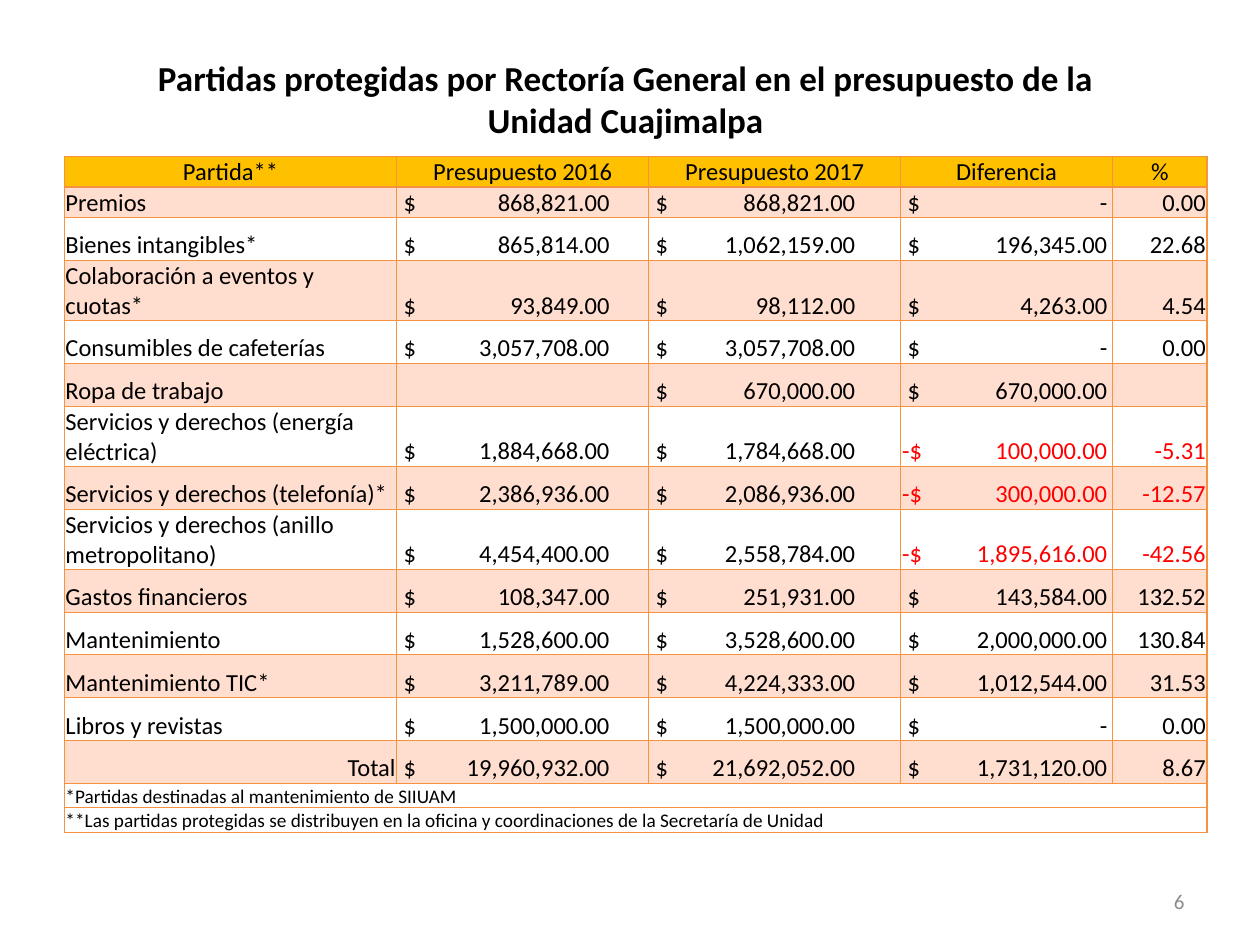
from lxml.etree import SubElement
from pptx import Presentation
from pptx.dml.color import RGBColor
from pptx.enum.text import MSO_ANCHOR as Anchor, MSO_AUTO_SIZE as AutoSize, PP_ALIGN as Align
from pptx.oxml import parse_xml
from pptx.oxml.ns import nsdecls, qn
from pptx.util import Inches, Pt

COLORS = {
    "text": "000000", "negative": "FF0000", "number": "8C8C8C",
    "header": "FFC000", "band": "FFDDCF", "plain": "FFFFFF", "border": "F69240",
}
COLUMN_WIDTHS = [2.64, 2, 2, 1.68, 0.75]
ROW_HEIGHTS = [0.19, 0.22] + [0.34] * 12 + [0.19] * 2
MONEY_TABS = {1: 1.68, 2: 1.63, 3: 1.63}
CELL_FORMAT = {
    "margin_left": Inches(0.01), "margin_right": Inches(0.01),
    "margin_top": Inches(0.01), "margin_bottom": 0,
    "vertical_anchor": Anchor.BOTTOM,
}
HEADERS = ["Partida**", "Presupuesto 2016", "Presupuesto 2017", "Diferencia", "%"]
BUDGET = [
    ("Premios", "868,821.00", "868,821.00", "-", "0.00"),
    ("Bienes intangibles*", "865,814.00", "1,062,159.00", "196,345.00", "22.68"),
    ("Colaboración a eventos y cuotas*", "93,849.00", "98,112.00", "4,263.00", "4.54"),
    ("Consumibles de cafeterías", "3,057,708.00", "3,057,708.00", "-", "0.00"),
    ("Ropa de trabajo", "", "670,000.00", "670,000.00", ""),
    ("Servicios y derechos (energía eléctrica)", "1,884,668.00", "1,784,668.00", "-100,000.00", "-5.31"),
    ("Servicios y derechos (telefonía)*", "2,386,936.00", "2,086,936.00", "-300,000.00", "-12.57"),
    ("Servicios y derechos (anillo metropolitano)", "4,454,400.00", "2,558,784.00", "-1,895,616.00", "-42.56"),
    ("Gastos financieros", "108,347.00", "251,931.00", "143,584.00", "132.52"),
    ("Mantenimiento", "1,528,600.00", "3,528,600.00", "2,000,000.00", "130.84"),
    ("Mantenimiento TIC*", "3,211,789.00", "4,224,333.00", "1,012,544.00", "31.53"),
    ("Libros y revistas", "1,500,000.00", "1,500,000.00", "-", "0.00"),
    ("Total", "19,960,932.00", "21,692,052.00", "1,731,120.00", "8.67"),
]
NOTES = [
    "*Partidas destinadas al mantenimiento de SIIUAM",
    "**Las partidas protegidas se distribuyen en la oficina y coordinaciones de la Secretaría de Unidad",
]


def apply_format(target, values):
    """Set each attribute named in values on the target."""
    for name, value in values.items():
        setattr(target, name, value)


def write_text(frame, text, size, color="text", align=Align.LEFT, bold=False):
    """Write one formatted paragraph into a text frame and return it."""
    paragraph = frame.paragraphs[0]
    paragraph.alignment = align
    if text:
        run = paragraph.add_run()
        run.text = text
        apply_format(run.font, {"name": "Calibri", "size": Pt(size), "bold": bold})
        run.font.color.rgb = RGBColor.from_string(COLORS[color])
    return paragraph


def style_cell(cell, fill):
    """Give a cell its margins, fill and four thin borders."""
    apply_format(cell, CELL_FORMAT)
    cell.fill.solid()
    cell.fill.fore_color.rgb = RGBColor.from_string(COLORS[fill])
    properties = cell._tc.get_or_add_tcPr()
    for position, side in enumerate(("lnL", "lnR", "lnT", "lnB")):
        properties.insert(position, parse_xml(
            f'<a:{side} {nsdecls("a")} w="{Pt(0.75)}"><a:solidFill>'
            f'<a:srgbClr val="{COLORS["border"]}"/></a:solidFill></a:{side}>'))


def write_money(cell, amount, tab):
    """Write a currency sign at the left and the amount at a right tab."""
    negative = amount.startswith("-") and len(amount) > 1
    sign = "-$" if negative else " $"
    value = amount[1:] if negative else amount
    paragraph = write_text(cell.text_frame, f"{sign}\t{value}", 14,
                           "negative" if negative else "text")
    tabs = SubElement(paragraph._p.get_or_add_pPr(), qn("a:tabLst"))
    SubElement(tabs, qn("a:tab"), pos=str(Inches(tab)), algn="r")


def write_budget_row(table, row, values):
    """Fill one budget row with its label, amounts and percentage."""
    for column, value in enumerate(values):
        cell = table.cell(row, column)
        if column in MONEY_TABS and value:
            write_money(cell, value, MONEY_TABS[column])
        else:
            align = Align.RIGHT if column == 4 or value == "Total" else Align.LEFT
            color = "negative" if value.startswith("-") else "text"
            write_text(cell.text_frame, value, 14, color, align)


def add_budget_table(slide):
    """Add the budget table with its header, rows and notes."""
    table = slide.shapes.add_table(
        len(ROW_HEIGHTS), len(COLUMN_WIDTHS), Inches(0.51), Inches(1.24),
        Inches(sum(COLUMN_WIDTHS)), Inches(sum(ROW_HEIGHTS))).table
    apply_format(table, {"first_row": False, "horz_banding": False})
    for column, width in zip(table.columns, COLUMN_WIDTHS):
        column.width = Inches(width)
    first_note = len(BUDGET) + 1
    for index, height in enumerate(ROW_HEIGHTS):
        table.rows[index].height = Inches(height)
        banded = index % 2 == 1 and index < first_note
        fill = "header" if index == 0 else "band" if banded else "plain"
        for cell in table.rows[index].cells:
            style_cell(cell, fill)
    for column, header in enumerate(HEADERS):
        write_text(table.cell(0, column).text_frame, header, 14, align=Align.CENTER)
    for row, values in enumerate(BUDGET, 1):
        write_budget_row(table, row, values)
    for row, note in enumerate(NOTES, first_note):
        table.cell(row, 0).merge(table.cell(row, len(COLUMN_WIDTHS) - 1))
        write_text(table.cell(row, 0).text_frame, note, 11)


def add_title(slide):
    """Place and fill the title placeholder."""
    title = slide.shapes.title
    apply_format(title, {"left": Inches(0.75), "top": Inches(0.28),
                         "width": Inches(8.43), "height": Inches(0.88)})
    apply_format(title.text_frame, {
        "margin_left": Inches(0.1), "margin_right": Inches(0.1),
        "margin_top": Inches(0.17), "margin_bottom": Inches(0.04),
        "vertical_anchor": Anchor.MIDDLE, "word_wrap": True,
        "auto_size": AutoSize.SHAPE_TO_FIT_TEXT})
    write_text(title.text_frame,
               "Partidas protegidas por Rectoría General en el presupuesto de la Unidad Cuajimalpa",
               20, align=Align.CENTER, bold=True)


def add_page_number(slide):
    """Add the page number at the lower right."""
    box = slide.shapes.add_textbox(Inches(7.17), Inches(6.95), Inches(2.33), Inches(0.4))
    apply_format(box.text_frame, {"word_wrap": True, "vertical_anchor": Anchor.MIDDLE})
    write_text(box.text_frame, "6", 12, "number", Align.RIGHT)


def main():
    """Build the budget slide and save it."""
    presentation = Presentation()
    apply_format(presentation, {"slide_width": Inches(10), "slide_height": Inches(7.5)})
    slide = presentation.slides.add_slide(presentation.slide_layouts[5])
    add_title(slide)
    add_page_number(slide)
    add_budget_table(slide)
    presentation.save("out.pptx")


if __name__ == "__main__":
    main()
